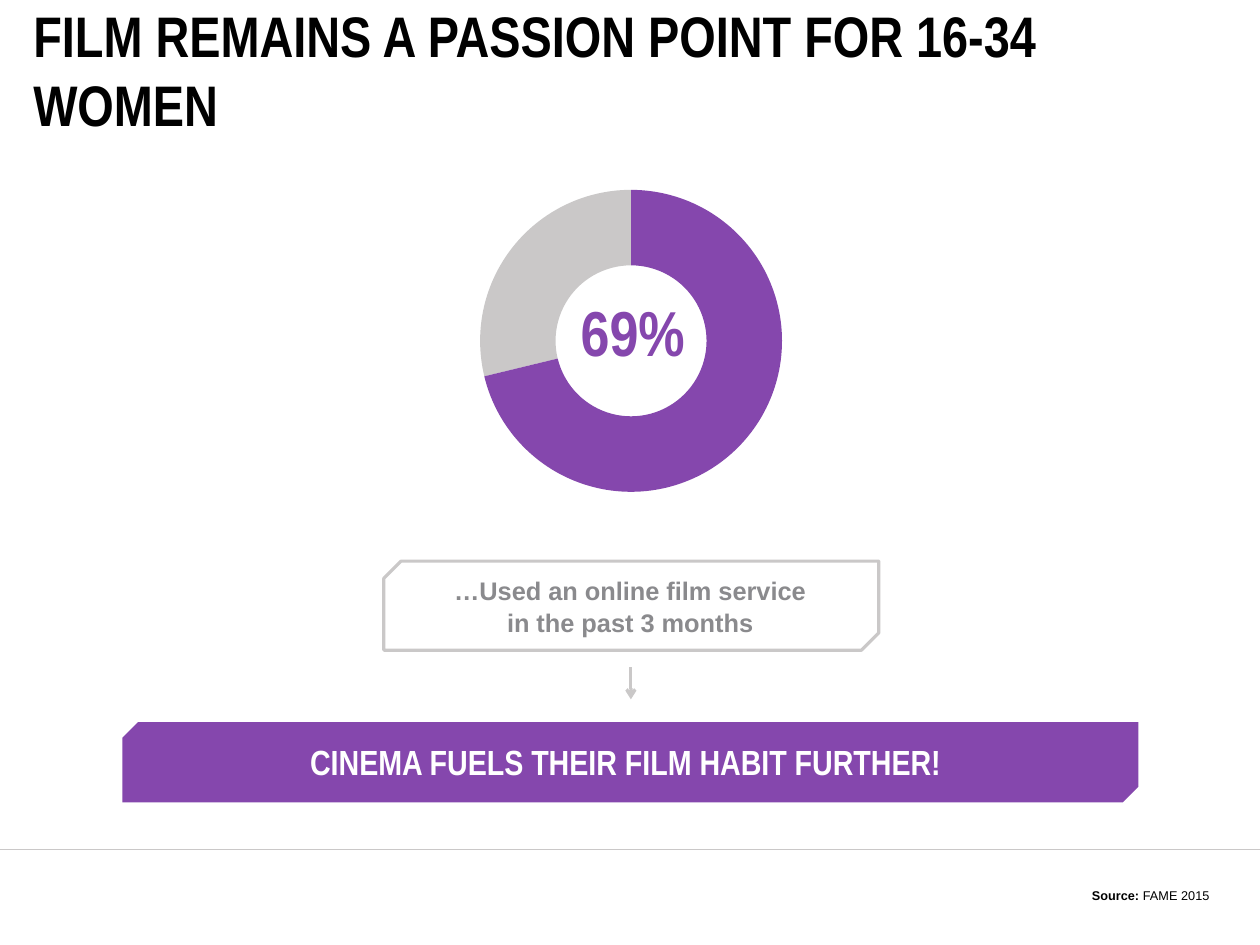
from lxml.etree import SubElement
from pptx import Presentation
from pptx.dml.color import RGBColor
from pptx.enum.shapes import MSO_CONNECTOR, MSO_SHAPE
from pptx.enum.text import MSO_ANCHOR, MSO_AUTO_SIZE, PP_ALIGN
from pptx.oxml.ns import qn
from pptx.util import Cm, Pt

PURPLE = "8547AD"
SILVER = "CAC8C8"
GREY = "8A8A8D"
BLACK = "000000"
WHITE = "FFFFFF"
NARROW = "Arial Narrow"


def colour(value):
    return RGBColor.from_string(value)


def format_span(span, font, size, shade, bold=True):
    span.font.name = font
    span.font.size = Pt(size)
    span.font.bold = bold
    span.font.color.rgb = colour(shade)


def add_title(page, text, left, top, width, height):
    title = page.shapes.title
    title.left, title.top, title.width, title.height = map(Cm, (left, top, width, height))
    frame = title.text_frame
    frame.text = text
    frame.word_wrap = True
    frame.auto_size = MSO_AUTO_SIZE.NONE
    frame.vertical_anchor = MSO_ANCHOR.MIDDLE
    frame.margin_left = frame.margin_right = frame.margin_top = frame.margin_bottom = 0
    para = frame.paragraphs[0]
    para.alignment = PP_ALIGN.LEFT
    format_span(para.runs[0], NARROW, 36, BLACK)


def add_text(page, text, left, top, width, height, font, size, shade,
             anchor=MSO_ANCHOR.MIDDLE, alignment=PP_ALIGN.CENTER):
    box = page.shapes.add_textbox(Cm(left), Cm(top), Cm(width), Cm(height))
    frame = box.text_frame
    frame.word_wrap = True
    frame.vertical_anchor = anchor
    para = frame.paragraphs[0]
    para.text = text
    para.alignment = alignment
    for span in para.runs:
        format_span(span, font, size, shade)
    return para


def add_preset(page, kind, left, top, width, height, adjustments, fill=None, line=None):
    shape = page.shapes.add_shape(kind, Cm(left), Cm(top), Cm(width), Cm(height))
    shape.shadow.inherit = False
    for index, value in enumerate(adjustments):
        shape.adjustments[index] = value
    if fill:
        shape.fill.solid()
        shape.fill.fore_color.rgb = colour(fill)
    else:
        shape.fill.background()
    if line:
        shape.line.color.rgb = colour(line)
        shape.line.width = Pt(2)
    else:
        shape.line.fill.background()


def add_ring_part(page, start, end, fill):
    units_per_degree = 0.6
    add_preset(page, MSO_SHAPE.BLOCK_ARC, 10.67, 4.22, 6.71, 6.71,
               (start * units_per_degree, end * units_per_degree, 0.25), fill=fill)


def add_line(page, start, end, width, arrow=False):
    line = page.shapes.add_connector(MSO_CONNECTOR.STRAIGHT, *map(Cm, start + end))
    line.line.color.rgb = colour(SILVER)
    line.line.width = Pt(width)
    if arrow:
        SubElement(line.line._get_or_add_ln(), qn("a:tailEnd"), type="arrow")
    SubElement(line._element.spPr, qn("a:effectLst"))


def main():
    deck = Presentation()
    deck.slide_width, deck.slide_height = Cm(28), Cm(21)
    page = deck.slides.add_slide(deck.slide_layouts[5])

    add_line(page, (0, 18.87), (28, 18.87), 0.5)
    add_preset(page, MSO_SHAPE.SNIP_2_DIAG_RECTANGLE, 2.72, 16.05, 22.58, 1.78,
               (0.196, 0), fill=PURPLE)
    add_preset(page, MSO_SHAPE.SNIP_2_DIAG_RECTANGLE, 8.53, 12.47, 11, 1.98,
               (0.194, 0), line=SILVER)
    add_line(page, (14.02, 14.83), (14.02, 15.54), 2, arrow=True)

    add_title(page, "FILM REMAINS A PASSION POINT FOR 16-34 WOMEN", 0.74, 0.97, 25.86, 1.14)
    caption = add_text(page, "…Used an online film service\vin the past 3 months",
                       9.19, 12.62, 9.63, 1.68, "Arial", 16, GREY)
    caption.line_spacing = Pt(20)
    add_text(page, "CINEMA FUELS THEIR FILM HABIT FURTHER! ",
             3.4, 16.33, 21.18, 1.19, NARROW, 22, WHITE)
    source = add_text(page, "Source: ", 12.22, 19.58, 14.91, 0.61, "Arial", 8, BLACK,
                      MSO_ANCHOR.BOTTOM, PP_ALIGN.RIGHT)
    study = source.add_run()
    study.text = "FAME 2015"
    format_span(study, "Arial", 8, BLACK, bold=False)

    add_ring_part(page, 166.4, 270, SILVER)
    add_ring_part(page, 270, 166.4, PURPLE)
    add_text(page, "69%", 12.27, 6.63, 3.58, 1.7, NARROW, 40, PURPLE, MSO_ANCHOR.BOTTOM)

    deck.save("out.pptx")


if __name__ == "__main__":
    main()
